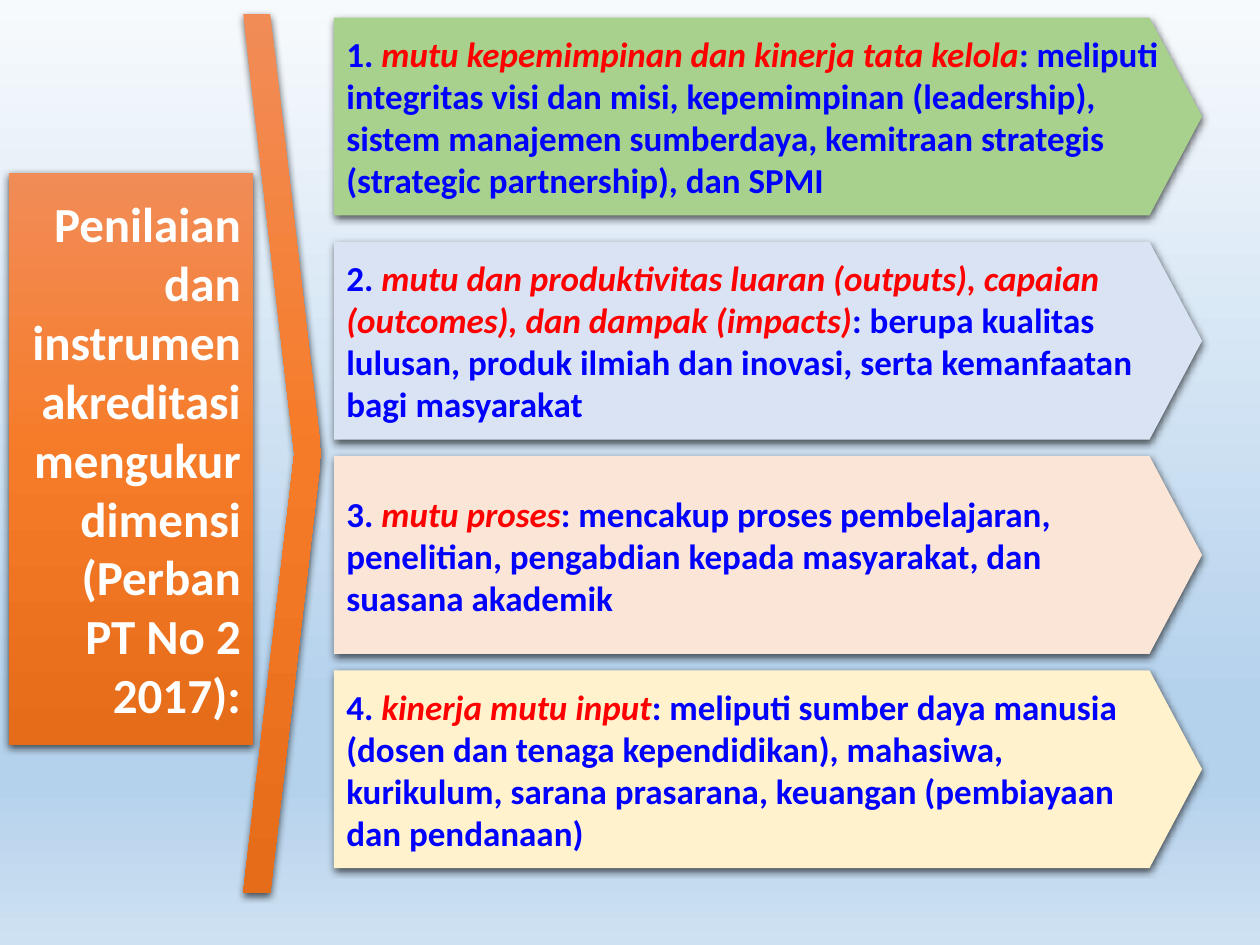
from dataclasses import dataclass

from lxml import etree
from pptx import Presentation
from pptx.dml.color import RGBColor
from pptx.enum import shapes, text
from pptx.oxml import ns
from pptx.util import Pt

WHITE = RGBColor(0xFF, 0xFF, 0xFF)
BLUE = RGBColor(0x00, 0x00, 0xFF)
RED = RGBColor(0xFF, 0x00, 0x00)
GREEN_FILL = RGBColor(0xA9, 0xD1, 0x8E)
BLUE_FILL = RGBColor(0xDA, 0xE3, 0xF3)
PEACH_FILL = RGBColor(0xFB, 0xE5, 0xD6)
YELLOW_FILL = RGBColor(0xFF, 0xF2, 0xCC)
BLACK = RGBColor(0x00, 0x00, 0x00)

FONT = "Calibri"


@dataclass(frozen=True)
class Stop:
    percent: int
    color: RGBColor


@dataclass(frozen=True)
class Frame:
    left: float
    top: float
    width: float
    height: float


@dataclass(frozen=True)
class Dimension:
    title: str
    detail: str
    fill: RGBColor


SKY = (
    Stop(0, RGBColor(0xF7, 0xFA, 0xFD)),
    Stop(74, RGBColor(0xB5, 0xD2, 0xEC)),
    Stop(83, RGBColor(0xB5, 0xD2, 0xEC)),
    Stop(100, RGBColor(0xCE, 0xE1, 0xF2)),
)
ORANGE = (
    Stop(0, RGBColor(0xF1, 0x8C, 0x57)),
    Stop(50, RGBColor(0xF6, 0x7B, 0x28)),
    Stop(100, RGBColor(0xE5, 0x6C, 0x19)),
)

HEADING = "Penilaian dan instrumen akreditasi mengukur dimensi (Perban PT No 2 2017):"
HEADING_FRAME = Frame(5.04, 98.64, 139.68, 326.88)
CHEVRON_FRAME = Frame(138.96, 7.92, 44.64, 502.56)

ARROW_LEFT, ARROW_WIDTH, ARROW_HEIGHT = 190.8, 496.08, 113.04
FIRST_TOP, SECOND_TOP, ARROW_STEP = 10.08, 138.24, 122.4

DIMENSIONS = (
    Dimension(
        "mutu kepemimpinan dan kinerja tata kelola",
        ": meliputi integritas visi dan misi, kepemimpinan (leadership), sistem "
        "manajemen sumberdaya, kemitraan strategis (strategic partnership), dan SPMI",
        GREEN_FILL,
    ),
    Dimension(
        "mutu dan produktivitas luaran (outputs), capaian (outcomes), "
        "dan dampak (impacts)",
        ": berupa kualitas lulusan, produk ilmiah dan inovasi, "
        "serta kemanfaatan bagi masyarakat",
        BLUE_FILL,
    ),
    Dimension(
        "mutu proses",
        ": mencakup proses pembelajaran, penelitian, pengabdian kepada masyarakat, "
        "dan suasana akademik",
        PEACH_FILL,
    ),
    Dimension(
        "kinerja mutu input",
        ": meliputi sumber daya manusia (dosen dan tenaga kependidikan), mahasiwa, "
        "kurikulum, sarana prasarana, keuangan (pembiayaan dan pendanaan)",
        YELLOW_FILL,
    ),
)


def add_node(parent, tag: str, **attributes):
    values = {key: str(value) for key, value in attributes.items()}
    return etree.SubElement(parent, ns.qn(tag), values)


def apply_gradient(fill, owner, stops: tuple[Stop, ...]) -> None:
    fill.gradient()
    fill.gradient_angle = 270
    stop_list = owner.find(".//" + ns.qn("a:gsLst"))
    for old_stop in list(stop_list):
        stop_list.remove(old_stop)
    for stop in stops:
        node = add_node(stop_list, "a:gs", pos=stop.percent * 1000)
        add_node(node, "a:srgbClr", val=stop.color)


def apply_shadow(shape) -> None:
    shape.shadow.inherit = False
    effects = shape._element.spPr.find(ns.qn("a:effectLst"))
    shadow = add_node(effects, "a:outerShdw", blurRad=Pt(4.5), dist=Pt(1.5),
                      dir=90 * 60000, algn="ctr", rotWithShape=0)
    color = add_node(shadow, "a:srgbClr", val=BLACK)
    add_node(color, "a:alpha", val=63000)


def add_block(page, kind: shapes.MSO_SHAPE, frame: Frame):
    shape = page.shapes.add_shape(kind, Pt(frame.left), Pt(frame.top),
                                  Pt(frame.width), Pt(frame.height))
    shape.line.fill.background()
    apply_shadow(shape)
    return shape


def start_paragraph(shape, alignment: text.PP_ALIGN):
    box = shape.text_frame
    box.word_wrap = True
    box.vertical_anchor = text.MSO_ANCHOR.MIDDLE
    para = box.paragraphs[0]
    para.alignment = alignment
    return para


def add_span(para, words: str, size: float, color: RGBColor,
             italic: bool = False) -> None:
    span = para.add_run()
    span.text = words
    span.font.name = FONT
    span.font.size = Pt(size)
    span.font.bold = True
    span.font.italic = italic
    span.font.color.rgb = color


def add_heading(page) -> None:
    panel = add_block(page, shapes.MSO_SHAPE.RECTANGLE, HEADING_FRAME)
    apply_gradient(panel.fill, panel._element, ORANGE)
    add_span(start_paragraph(panel, text.PP_ALIGN.RIGHT), HEADING, 28, WHITE)


def add_chevron(page) -> None:
    chevron = add_block(page, shapes.MSO_SHAPE.CHEVRON, CHEVRON_FRAME)
    chevron.adjustments[0] = 0.654
    apply_gradient(chevron.fill, chevron._element, ORANGE)


def add_dimension(page, number: int, dimension: Dimension) -> None:
    top = FIRST_TOP if number == 1 else SECOND_TOP + (number - 2) * ARROW_STEP
    arrow = add_block(page, shapes.MSO_SHAPE.PENTAGON,
                      Frame(ARROW_LEFT, top, ARROW_WIDTH, ARROW_HEIGHT))
    arrow.adjustments[0] = 0.266
    arrow.fill.solid()
    arrow.fill.fore_color.rgb = dimension.fill
    para = start_paragraph(arrow, text.PP_ALIGN.LEFT)
    add_span(para, f"{number}. ", 20, BLUE)
    add_span(para, dimension.title, 20, RED, italic=True)
    add_span(para, dimension.detail, 20, BLUE)


def main() -> None:
    deck = Presentation()
    deck.slide_width, deck.slide_height = Pt(720), Pt(540)
    page = deck.slides.add_slide(deck.slide_layouts[6])
    apply_gradient(page.background.fill, page._element, SKY)
    add_heading(page)
    add_chevron(page)
    for number, dimension in enumerate(DIMENSIONS, start=1):
        add_dimension(page, number, dimension)
    deck.save("out.pptx")


if __name__ == "__main__":
    main()
